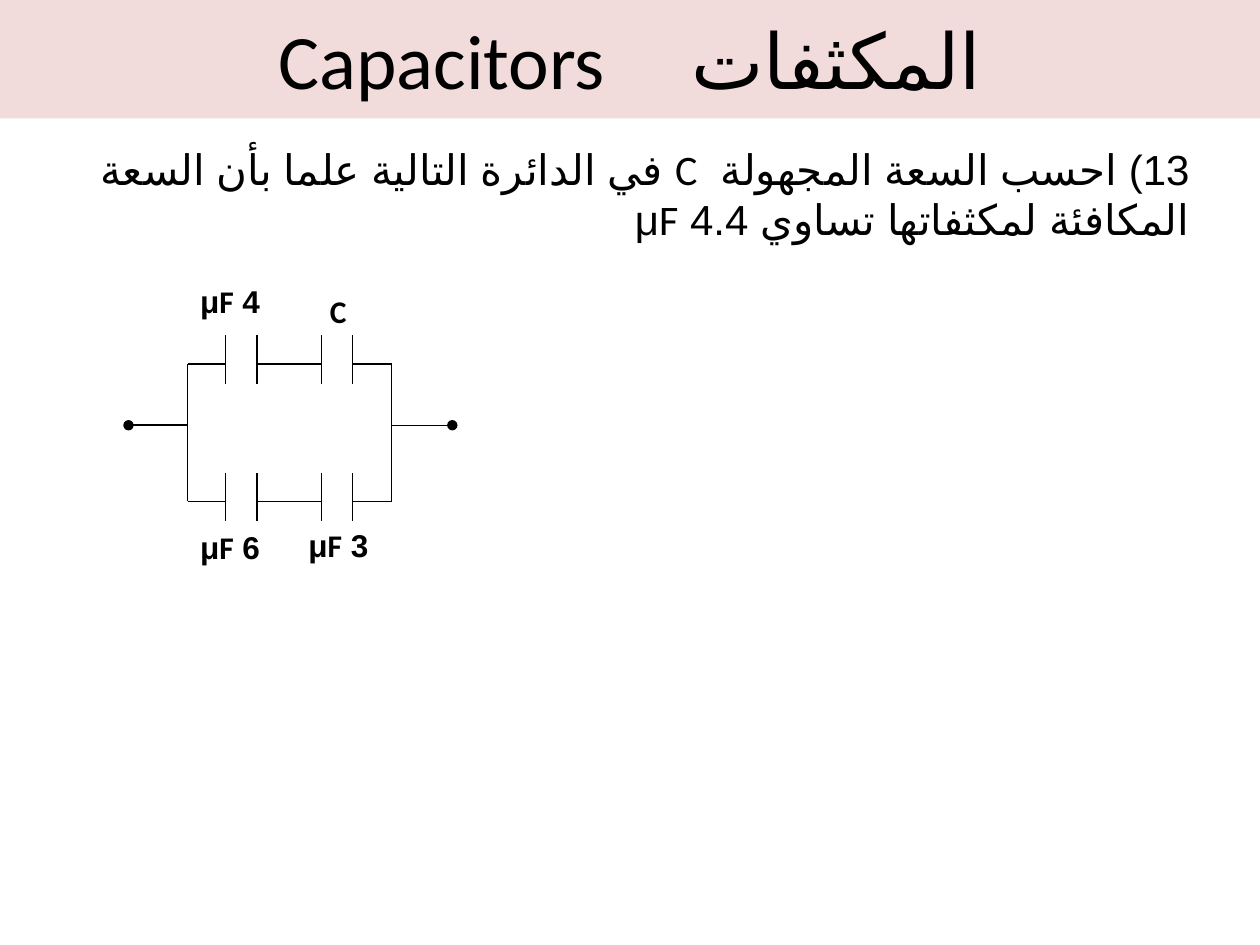
from dataclasses import dataclass
from lxml import etree
from pptx import Presentation
from pptx.dml.color import RGBColor
from pptx.enum.lang import MSO_LANGUAGE_ID
from pptx.enum.shapes import MSO_CONNECTOR, MSO_SHAPE
from pptx.enum.text import MSO_ANCHOR, PP_ALIGN
from pptx.oxml.ns import qn
from pptx.util import Inches, Pt

RECT = MSO_SHAPE.RECTANGLE
LINE = MSO_CONNECTOR.STRAIGHT
MID = MSO_ANCHOR.MIDDLE
CENTRE, RIGHT = PP_ALIGN.CENTER, PP_ALIGN.RIGHT
ARABIC = MSO_LANGUAGE_ID.ARABIC


@dataclass(frozen=True)
class Theme:
    ink: RGBColor = RGBColor(0, 0, 0)
    band: RGBColor = RGBColor(0xF2, 0xDC, 0xDB)
    font: str = "Calibri"
    greek: str = "Arial"
    script: str = "Arial"
    head: int = 44
    body: int = 24
    label: int = 18
    wire: float = 0.75
    lead: float = 1


THEME = Theme()
COLS, ROWS = 100, 75  # square grid cells on the slide
CELL = Inches(0.1)


def cells(*sizes):
    return [round(size * CELL) for size in sizes]


def write(frame, parts, size, align, bold=False):
    """Fill a frame with one right-to-left paragraph."""
    frame.word_wrap = True
    para = frame.paragraphs[0]
    para.alignment = align
    para._p.get_or_add_pPr().set("rtl", "1")
    for part in parts:
        run = para.add_run()
        run.text = part
        font = run.font
        font.size, font.bold = Pt(size), bold
        font.name = THEME.greek if part == "μ" else THEME.font
        font.color.rgb = THEME.ink
        font.language_id = ARABIC
        # Arabic letters take the complex-script font
        face = etree.SubElement(run._r.get_or_add_rPr(), qn("a:cs"))
        face.set("typeface", THEME.script)
    return para


def wire(slide, x1, y1, x2, y2, width=THEME.wire, dot=False):
    line = slide.shapes.add_connector(LINE, *cells(x1, y1, x2, y2))
    line.line.color.rgb = THEME.ink
    line.line.width = Pt(width)
    if dot:
        tail = etree.SubElement(line.line._get_or_add_ln(), qn("a:tailEnd"))
        tail.set("type", "oval")
    etree.SubElement(line._element.spPr, qn("a:effectLst"))


def title(slide, box):
    bar = slide.shapes.add_shape(RECT, *cells(*box))
    bar.shadow.inherit = False
    bar.fill.solid()
    bar.fill.fore_color.rgb = THEME.band
    bar.line.fill.background()
    bar.text_frame.vertical_anchor = MID
    write(bar.text_frame, ["المكثفات    Capacitors"], THEME.head, CENTRE)


def task(slide, box):
    text = slide.shapes.add_textbox(*cells(*box))
    parts = ["13) احسب السعة المجهولة  C في الدائرة التالية علما بأن "
             "السعة المكافئة لمكثفاتها تساوي 4.4 ", "μ", "F"]
    para = write(text.text_frame, parts, THEME.body, RIGHT)
    para.space_before = Pt(0.2 * THEME.body)


def label(slide, mid, top, parts):
    wide, high = 7.1, 4
    text = slide.shapes.add_textbox(*cells(mid - wide / 2, top, wide, high))
    write(text.text_frame, parts, THEME.label, CENTRE, bold=True)


def branch(slide, left, right, y, plates):
    """Draw two capacitors in series between the side rails."""
    for x in plates:
        wire(slide, x, y + 1.55, x, y - 2.3)
    stops = [left, *plates, right]
    for start, end in zip(stops[::2], stops[1::2]):
        wire(slide, start, y, end, y)


def circuit(slide, box):
    x, y, wide, high = box
    left, right = x + 4.7, x + wide - 4.8
    upper, lower, mid = y + 7, y + 17.9, y + 11.85
    plates = [x + 7.7, x + 10.2, x + 15.3, x + 17.8]

    # Side rails and terminals
    for rail, end, width in ((left, x, THEME.lead),
                             (right, x + wide, THEME.wire)):
        wire(slide, rail, upper, rail, lower)
        wire(slide, rail, mid, end, mid, width, dot=True)

    # Parallel branches
    for level in (upper, lower):
        branch(slide, left, right, level, plates)

    # Capacitances
    first, second = x + 8.05, x + 16.65
    for centre, top, parts in (
        (first, y, ["4 ", "μ", "F"]),
        (second, y + 0.8, ["C"]),
        (first, y + high - 4, ["6 ", "μ", "F"]),
        (second, y + high - 4.15, ["3 ", "μ", "F"]),
    ):
        label(slide, centre, top, parts)


def main():
    deck = Presentation()
    deck.slide_width, deck.slide_height = cells(COLS, ROWS)
    slide = deck.slides.add_slide(deck.slide_layouts[6])
    task(slide, (5.4, 10.9, 90, 56.8))
    title(slide, (0, 0, COLS, 9.4))
    circuit(slide, (10.2, 21.9, 25.7, 23.5))
    deck.save("out.pptx")


if __name__ == "__main__":
    main()
